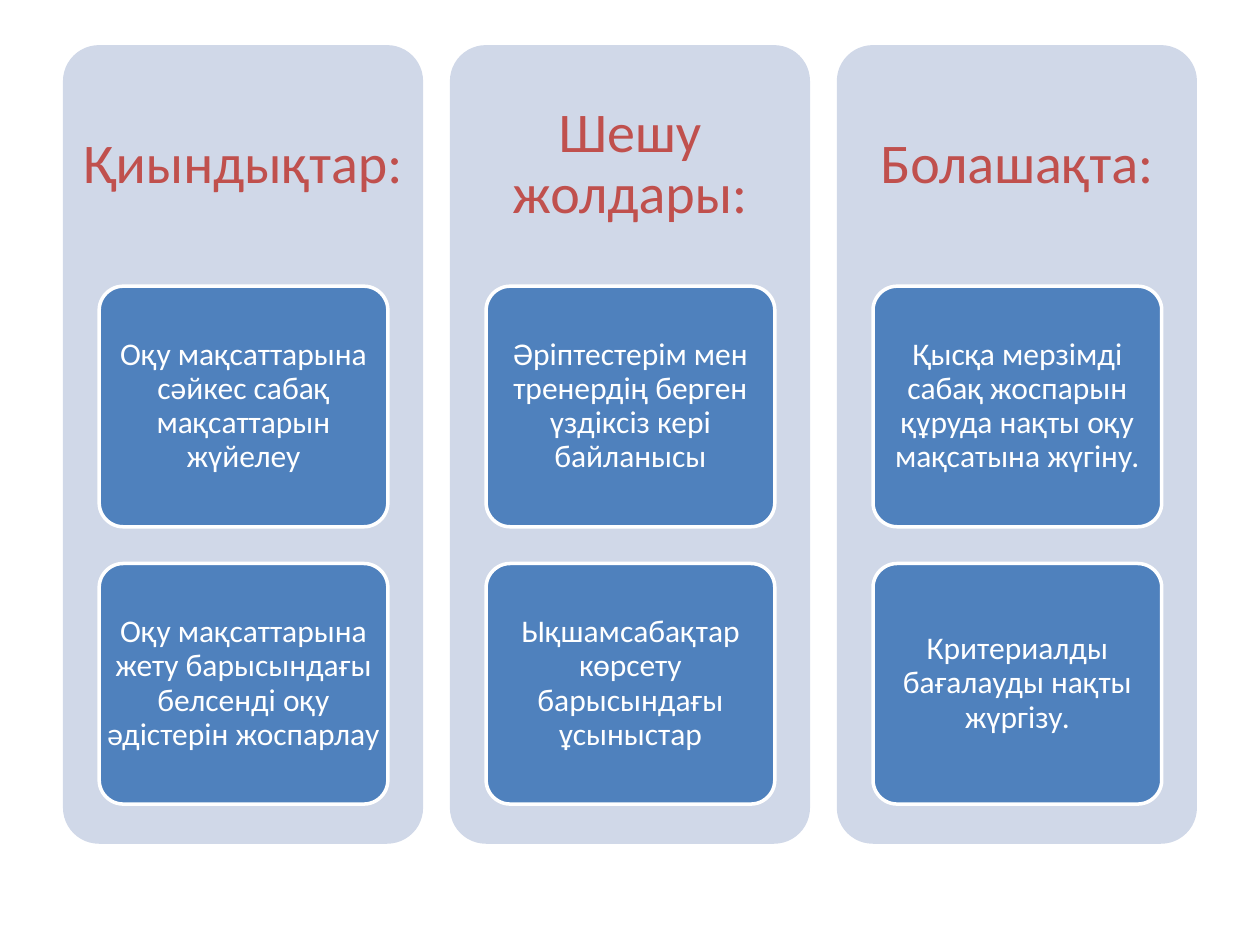
from dataclasses import dataclass

from pptx import Presentation
from pptx.dml.color import RGBColor
from pptx.enum.shapes import MSO_SHAPE
from pptx.enum.text import MSO_ANCHOR, PP_ALIGN
from pptx.util import Cm, Length, Pt

ROUNDED = MSO_SHAPE.ROUNDED_RECTANGLE
MIDDLE = MSO_ANCHOR.MIDDLE
CENTER = PP_ALIGN.CENTER
BLANK_LAYOUT = 6


@dataclass(frozen=True)
class Theme:
    font: str = "Calibri"
    heading_size: Length = Pt(32)
    card_size: Length = Pt(18)
    line_spacing: float = 0.9
    corner: float = 0.1
    card_border: Length = Pt(2)
    panel: RGBColor = RGBColor(0xD0, 0xD8, 0xE8)
    card: RGBColor = RGBColor(0x4F, 0x81, 0xBD)
    heading: RGBColor = RGBColor(0xC0, 0x50, 0x4D)
    white: RGBColor = RGBColor(0xFF, 0xFF, 0xFF)


@dataclass(frozen=True)
class Box:
    left: Length
    top: Length
    width: Length
    height: Length


@dataclass(frozen=True)
class Column:
    heading: str
    cards: tuple[str, ...]


THEME = Theme()

COLUMN_LEFT, COLUMN_TOP = Cm(1.27), Cm(0.91)
COLUMN_WIDTH, COLUMN_HEIGHT = Cm(7.26), Cm(16.1)
COLUMN_PITCH = Cm(7.8)
HEADING_HEIGHT = Cm(4.83)
HEADING_INSET = Cm(0.33)
CARD_INDENT, CARD_TOP = Cm(0.73), Cm(5.77)
CARD_WIDTH, CARD_HEIGHT = Cm(5.82), Cm(4.85)
CARD_PITCH = Cm(5.59)
CARD_INSET = Cm(0.13)
CORNER_INSET_RATIO = 0.29  # share of the corner radius kept free of text

COLUMNS = (
    Column("Қиындықтар:", (
        "Оқу мақсаттарына сәйкес сабақ мақсаттарын жүйелеу",
        "Оқу мақсаттарына жету барысындағы белсенді оқу әдістерін жоспарлау",
    )),
    Column("Шешу жолдары:", (
        "Әріптестерім мен тренердің берген үздіксіз кері байланысы",
        "Ықшамсабақтар көрсету барысындағы ұсыныстар",
    )),
    Column("Болашақта:", (
        "Қысқа мерзімді сабақ жоспарын құруда нақты оқу мақсатына жүгіну.",
        "Критериалды бағалауды нақты жүргізу.",
    )),
)


def write_text(shape, text: str, *, size: Length, color: RGBColor, inset: Length) -> None:
    frame = shape.text_frame
    frame.word_wrap = True
    frame.vertical_anchor = MIDDLE
    frame.margin_left = frame.margin_right = inset
    frame.margin_top = frame.margin_bottom = inset
    paragraph = frame.paragraphs[0]
    paragraph.text = text
    paragraph.alignment = CENTER
    paragraph.line_spacing = THEME.line_spacing
    paragraph.font.name = THEME.font
    paragraph.font.size = size
    paragraph.font.color.rgb = color


def add_rounded_box(slide, box: Box, fill: RGBColor):
    shape = slide.shapes.add_shape(ROUNDED, box.left, box.top, box.width, box.height)
    shape.adjustments[0] = THEME.corner
    shape.shadow.inherit = False
    shape.fill.solid()
    shape.fill.fore_color.rgb = fill
    shape.line.fill.background()
    return shape


def add_card(slide, box: Box, text: str) -> None:
    """Draw a card whose text inset is measured from its outer edge."""
    card = add_rounded_box(slide, box, THEME.card)
    card.line.color.rgb = THEME.white
    card.line.width = THEME.card_border
    corner_radius = THEME.corner * min(box.width, box.height)
    inset = Length(CARD_INSET - CORNER_INSET_RATIO * corner_radius)
    write_text(card, text, size=THEME.card_size, color=THEME.white, inset=inset)


def add_column(slide, column: Column, left: Length) -> None:
    add_rounded_box(slide, Box(left, COLUMN_TOP, COLUMN_WIDTH, COLUMN_HEIGHT), THEME.panel)
    heading = slide.shapes.add_textbox(left, COLUMN_TOP, COLUMN_WIDTH, HEADING_HEIGHT)
    write_text(heading, column.heading, size=THEME.heading_size,
               color=THEME.heading, inset=HEADING_INSET)
    for row, text in enumerate(column.cards):
        top = CARD_TOP + row * CARD_PITCH
        add_card(slide, Box(left + CARD_INDENT, top, CARD_WIDTH, CARD_HEIGHT), text)


def main() -> None:
    presentation = Presentation()
    presentation.slide_width, presentation.slide_height = Cm(25.4), Cm(19.05)
    slide = presentation.slides.add_slide(presentation.slide_layouts[BLANK_LAYOUT])
    for index, column in enumerate(COLUMNS):
        add_column(slide, column, COLUMN_LEFT + index * COLUMN_PITCH)
    presentation.save("out.pptx")


if __name__ == "__main__":
    main()
